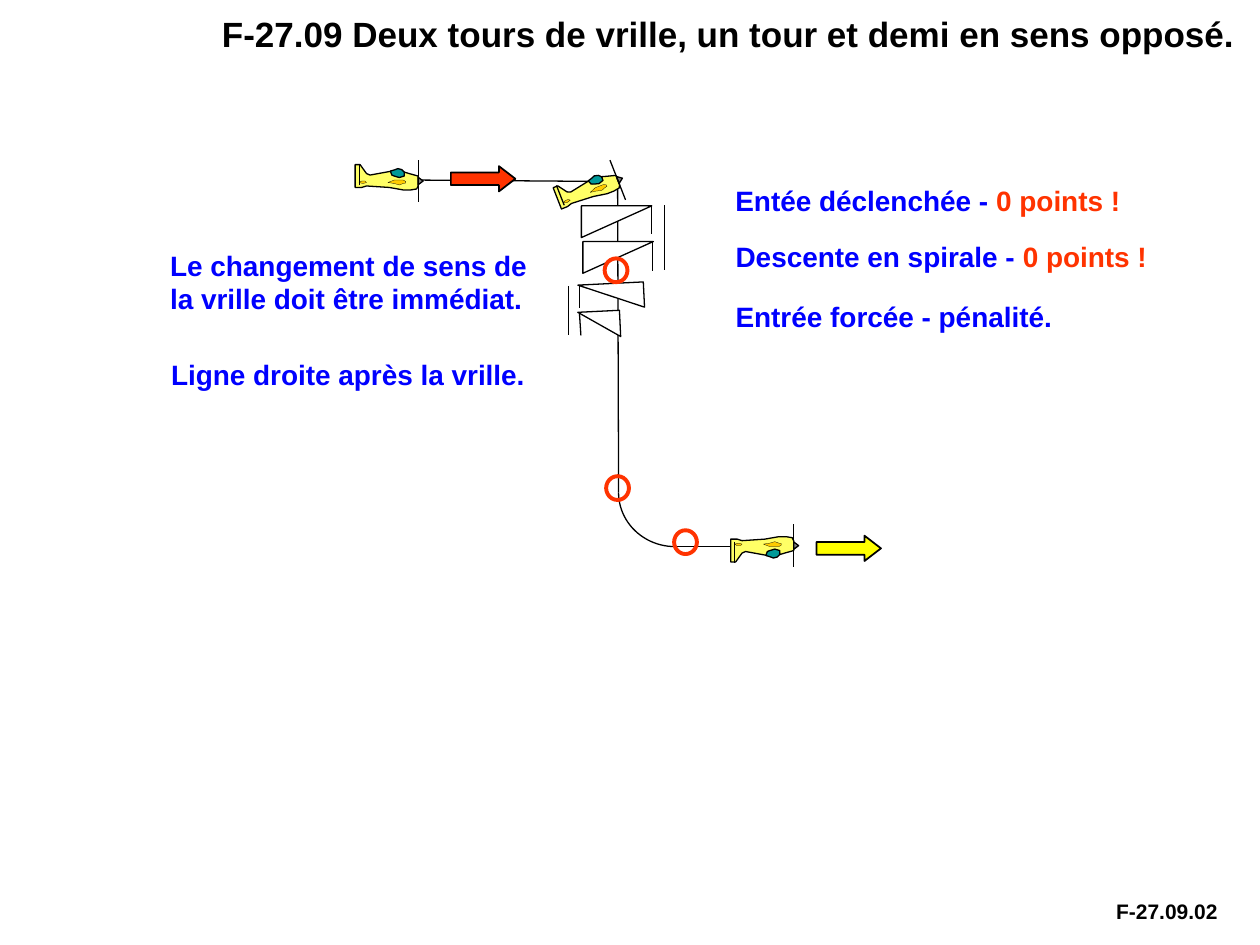
"""Builds the F-27.09 aerobatic spin slide."""
from math import cos, radians, sin

from lxml.etree import SubElement
from pptx import Presentation
from pptx.dml.color import RGBColor
from pptx.enum.shapes import MSO_CONNECTOR, MSO_SHAPE
from pptx.enum.text import MSO_ANCHOR, MSO_AUTO_SIZE, PP_ALIGN
from pptx.oxml.ns import qn
from pptx.util import Cm, Pt

BLACK, BLUE, RED = "000000", "0000FF", "FF3300"
TITLE = "F-27.09 Deux tours de vrille, un tour et demi en sens opposé."
CODE = "F-27.09.02"
NOTES = [
    ((14.58, 5.92, 9.07, 0.94), PP_ALIGN.LEFT, [("Entrée forcée - pénalité.", BLUE)]),
    ((14.58, 4.7, 9.07, 0.94), PP_ALIGN.LEFT,
     [("Descente en spirale - ", BLUE), ("0 points !", RED)]),
    ((14.3, 3.58, 8.81, 0.94), PP_ALIGN.CENTER,
     [("Entée déclenchée - ", BLUE), ("0 points !", RED)]),
    ((3.2, 7.09, 10.49, 0.94), PP_ALIGN.LEFT, [("Ligne droite après la vrille.", BLUE)]),
    ((3.18, 4.88, 8.18, 1.63), PP_ALIGN.LEFT,
     [("Le changement de sens de la vrille doit être immédiat.", BLUE)]),
]

FLIGHT_LINES = [(8.48, 3.63, 12.45, 3.66), (12.45, 3.71, 12.47, 9.93),
                (13.61, 11.02, 14.71, 11.02)]
PULL_OUT = (12.47, 8.84, 2.28, 2.18)
SPIN_LINES = [(11.68, 5.74, 11.68, 6.2), (11.68, 6.3, 11.71, 6.76),
              (11.46, 5.77, 11.46, 6.76), (13.13, 4.14, 13.13, 4.72),
              (13.16, 4.88, 13.16, 5.46), (13.39, 4.14, 13.39, 5.44)]
SPIN_TURNS = [(12.32, 5.97, 1.32, 0.51, 177.2), (12.08, 6.54, 0.84, 0.53, 177.2),
              (12.43, 4.47, 0.64, 1.42, 90), (12.46, 5.19, 0.64, 1.42, 90)]
ARROWS = [(16.46, 10.8, "FFFF00"), (9.09, 3.35, RED)]
JUDGING_POINTS = [(12.19, 5.21), (13.59, 10.69), (12.22, 9.6)]

PLANES = [(16.0, 11.01, 0, -1), (8.43, 3.64, 0, 1), (12.45, 3.62, -21.4, 1)]
PLANE_PARTS = [
    ("FFFF66", 0.75, [
        (-0.28, -0.17), (-0.18, -0.14), (0, -0.09), (0, 0.11), (-0.03, 0.17),
        (-0.15, 0.19), (-0.3, 0.19), (-0.58, 0.14), (-1.04, 0.11), (-1.14, 0.14),
        (-1.27, 0.14), (-1.27, -0.32), (-1.17, -0.32), (-1.04, -0.14), (-0.97, -0.11),
        (-0.53, -0.19), (-0.51, -0.11), (-0.36, -0.09), (-0.28, -0.14)]),
    ("009999", 0.75, [
        (-0.56, -0.19), (-0.53, -0.11), (-0.48, -0.09), (-0.38, -0.06), (-0.28, -0.09),
        (-0.28, -0.17), (-0.33, -0.22), (-0.41, -0.24), (-0.46, -0.22)]),
    ("FFCC00", 0.13, [
        (-0.61, 0.04), (-0.48, -0.01), (-0.3, -0.01), (-0.25, 0.02), (-0.25, 0.05),
        (-0.3, 0.06), (-0.38, 0.09), (-0.48, 0.06)]),
    ("FFCC00", 0.13, [
        (-1.19, 0.04), (-1.12, 0.06), (-1.07, 0.05), (-1.04, 0.04), (-1.07, 0.01),
        (-1.14, 0.01)]),
]
PLANE_LINES = [((-1.19, 0.09), (-1.19, -0.34)), ((0, 0), (0, -0.42)), ((0, 0), (0, 0.44))]
SPINNER = (0.05, 0.01)


def color(hex_code):
    return RGBColor.from_string(hex_code)


def paint(shape, fill, line=BLACK, width=0.75):
    shape.shadow.inherit = False
    if fill:
        shape.fill.solid()
        shape.fill.fore_color.rgb = color(fill)
    else:
        shape.fill.background()
    shape.line.color.rgb = color(line)
    shape.line.width = Pt(width)


def add_preset(shapes, kind, box, fill, line=BLACK, width=0.75):
    shape = shapes.add_shape(kind, *map(Cm, box))
    paint(shape, fill, line, width)
    return shape


def add_turned(shapes, kind, center_x, center_y, width, height, angle, fill):
    box = (center_x - width / 2, center_y - height / 2, width, height)
    add_preset(shapes, kind, box, fill).rotation = angle


def add_line(shapes, *ends):
    line = shapes.add_connector(MSO_CONNECTOR.STRAIGHT, *map(Cm, ends))
    line.line.color.rgb = color(BLACK)
    line.line.width = Pt(0.75)
    SubElement(line._element.spPr, qn("a:effectLst"))


def add_plane(shapes, hub_x, hub_y, pitch, side):
    turn = radians(pitch)

    def place(point):
        x, y = point[0], point[1] * side
        return hub_x + x * cos(turn) - y * sin(turn), hub_y + x * sin(turn) + y * cos(turn)

    plane = shapes.add_group_shape().shapes
    for fill, width, outline in PLANE_PARTS:
        start, *rest = [tuple(map(Cm, place(point))) for point in outline]
        builder = plane.build_freeform(*start)
        builder.add_line_segments(rest, close=True)
        paint(builder.convert_to_shape(), fill, width=width)
    add_turned(plane, MSO_SHAPE.ISOSCELES_TRIANGLE, *place(SPINNER), 0.15, 0.1,
               90 + pitch, "808080")
    for start, end in PLANE_LINES:
        add_line(plane, *place(start), *place(end))


def write(shape, runs, size, align=PP_ALIGN.LEFT, spacing=None):
    frame = shape.text_frame
    frame.word_wrap = True
    frame.auto_size = MSO_AUTO_SIZE.NONE
    frame.vertical_anchor = MSO_ANCHOR.TOP
    paragraph = frame.paragraphs[0]
    paragraph.alignment = align
    paragraph.line_spacing = spacing
    font = paragraph.font
    font.name, font.size, font.bold = "Arial", Pt(size), True
    for text, text_color in runs:
        run = paragraph.add_run()
        run.text = text
        run.font.color.rgb = color(text_color)


def main():
    deck = Presentation()
    deck.slide_width, deck.slide_height = Cm(25.4), Cm(19.05)
    slide = deck.slides.add_slide(deck.slide_layouts[5])
    shapes = slide.shapes

    title = shapes.title
    title.left, title.top, title.width, title.height = map(Cm, (4.22, 0.28, 21.08, 0.91))
    write(title, [(TITLE, BLACK)], 20, spacing=0.8)
    code = shapes.add_textbox(*map(Cm, (22.25, 18.08, 2.62, 0.66)))
    write(code, [(CODE, BLACK)], 12, spacing=0.8)

    for ends in FLIGHT_LINES:
        add_line(shapes, *ends)
    pull_out = add_preset(shapes, MSO_SHAPE.ARC, PULL_OUT, None)
    pull_out.adjustments[0], pull_out.adjustments[1] = 54, 108
    for plane in PLANES:
        add_plane(shapes, *plane)
    for left, top, fill in ARROWS:
        arrow = add_preset(shapes, MSO_SHAPE.RIGHT_ARROW, (left, top, 1.3, 0.51), fill, width=1)
        arrow.adjustments[1] = 0.65
    for turn in SPIN_TURNS:
        add_turned(shapes, MSO_SHAPE.RIGHT_TRIANGLE, *turn, "FFFFFF")
    for ends in SPIN_LINES:
        add_line(shapes, *ends)

    for box, align, runs in NOTES:
        write(shapes.add_textbox(*map(Cm, box)), runs, 16, align)
    for left, top in JUDGING_POINTS:
        add_preset(shapes, MSO_SHAPE.OVAL, (left, top, 0.46, 0.48), None, RED, 2.25)

    deck.save("out.pptx")


if __name__ == "__main__":
    main()
